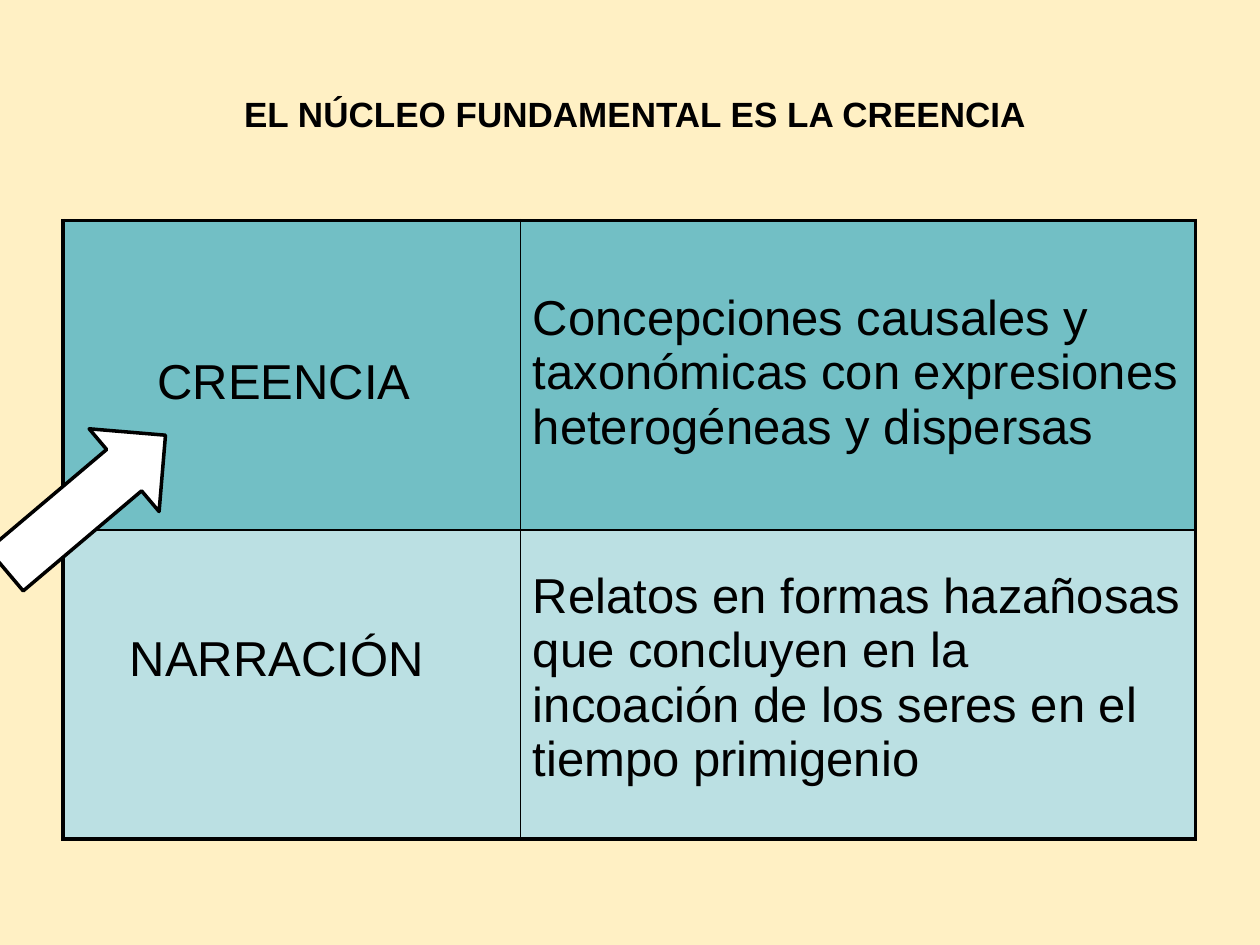
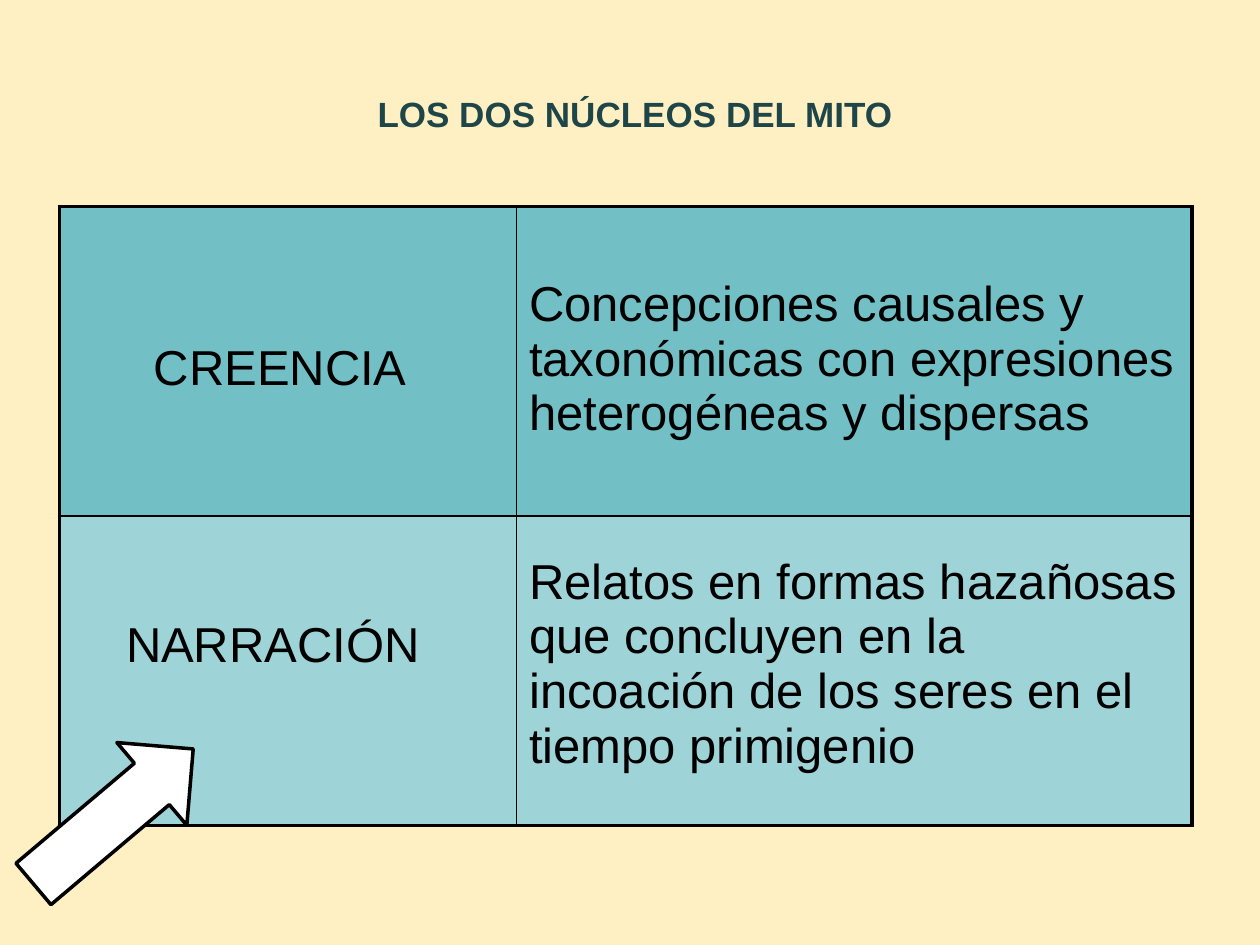
from lxml.etree import SubElement
from pptx import Presentation
from pptx.dml.color import RGBColor
from pptx.enum.shapes import MSO_SHAPE
from pptx.enum.text import MSO_ANCHOR, PP_ALIGN
from pptx.oxml.ns import qn
from pptx.util import Inches, Pt

GRID_COLUMNS = 100
BLACK, WHITE = "000000", "FFFFFF"
BACKGROUND = "FFF0C4"
BELIEF_FILL = "72BFC5"
OUTER_BORDER, INNER_BORDER = 2.25, 1

COLUMN_WIDTHS = (36.3, 53.6)
ROW_HEIGHT = 24.55
CELLS = (
    (
        ("CREENCIA", {"margin_left": 7.5, "margin_top": 10.7}),
        ("Concepciones causales y taxonómicas con expresiones "
         "heterogéneas y dispersas", {"margin_left": 1, "margin_top": 5.6}),
    ),
    (
        ("NARRACIÓN", {"margin_left": 5.3, "margin_top": 8.1}),
        ("Relatos en formas hazañosas que concluyen en la incoación "
         "de los seres en el tiempo primigenio",
         {"margin_left": 1, "margin_top": 3.1}),
    ),
)
SLIDES = (
    {"title": "EL NÚCLEO FUNDAMENTAL ES LA CREENCIA", "title_color": BLACK,
     "table_at": (5, 17.5), "narration_fill": "BBE0E3", "arrow_at": (-1.5, 35.6)},
    {"title": "LOS DOS NÚCLEOS DEL MITO", "title_color": "1E4649",
     "table_at": (4.7, 16.4), "narration_fill": "9ED3D7", "arrow_at": (0.7, 60.5)},
)


def color(value):
    return RGBColor.from_string(value)


def apply_format(target, values):
    for name, value in values.items():
        setattr(target, name, value)


class Deck:
    title_font = {"name": "Arial", "size": Pt(20), "bold": True}
    cell_font = {"name": "Arial", "size": Pt(28), "bold": False}

    def __init__(self, presentation):
        self.presentation = presentation
        self.unit = presentation.slide_width / GRID_COLUMNS
        self.slide = None

    def grid(self, *values):
        return [round(value * self.unit) for value in values]

    def add_slide(self):
        layout = self.presentation.slide_layouts[6]
        self.slide = self.presentation.slides.add_slide(layout)
        self.paint(self.slide.background.fill, BACKGROUND)

    def paint(self, fill, value):
        fill.solid()
        fill.fore_color.rgb = color(value)

    def add_text(self, paragraph, text, font, value):
        run = paragraph.add_run()
        run.text = text
        apply_format(run.font, font)
        run.font.color.rgb = color(value)

    def add_title(self, text, value):
        shape = self.slide.shapes.add_textbox(*self.grid(4.7, 1.6, 91.4, 14.8))
        frame = shape.text_frame
        apply_format(frame, {"word_wrap": True, "vertical_anchor": MSO_ANCHOR.MIDDLE})
        paragraph = frame.paragraphs[0]
        paragraph.alignment = PP_ALIGN.CENTER
        self.add_text(paragraph, text, self.title_font, value)

    def add_table(self, position, row_fills):
        size = sum(COLUMN_WIDTHS), ROW_HEIGHT * len(CELLS)
        frame = self.slide.shapes.add_table(
            len(CELLS), len(COLUMN_WIDTHS), *self.grid(*position, *size))
        table = frame.table
        apply_format(table, {"first_row": False, "horz_banding": False})
        for column, width in zip(table.columns, self.grid(*COLUMN_WIDTHS)):
            column.width = width
        for row_index, row_cells in enumerate(CELLS):
            table.rows[row_index].height = self.grid(ROW_HEIGHT)[0]
            for column_index, (text, margins) in enumerate(row_cells):
                cell = table.cell(row_index, column_index)
                self.add_borders(cell, {
                    "a:lnL": column_index == 0,
                    "a:lnR": column_index == len(COLUMN_WIDTHS) - 1,
                    "a:lnT": row_index == 0,
                    "a:lnB": row_index == len(CELLS) - 1,
                })
                self.paint(cell.fill, row_fills[row_index])
                apply_format(cell, {name: self.grid(value)[0]
                                    for name, value in margins.items()})
                self.add_text(cell.text_frame.paragraphs[0], text, self.cell_font, BLACK)

    def add_borders(self, cell, sides):
        properties = cell._tc.get_or_add_tcPr()
        for tag, is_outer in sides.items():
            width = Pt(OUTER_BORDER if is_outer else INNER_BORDER)
            line = SubElement(properties, qn(tag), w=str(int(width)))
            fill = SubElement(line, qn("a:solidFill"))
            SubElement(fill, qn("a:srgbClr"), val=BLACK)

    def add_arrow(self, position):
        shape = self.slide.shapes.add_shape(
            MSO_SHAPE.RIGHT_ARROW, *self.grid(*position, 16.6, 8.6))
        shape.rotation = 319.8
        shape.shadow.inherit = False
        self.paint(shape.fill, WHITE)
        self.paint(shape.line.fill, BLACK)
        shape.line.width = Pt(2)


def main():
    presentation = Presentation()
    apply_format(presentation, {"slide_width": Inches(10), "slide_height": Inches(7.5)})
    deck = Deck(presentation)
    for content in SLIDES:
        deck.add_slide()
        deck.add_table(content["table_at"], (BELIEF_FILL, content["narration_fill"]))
        deck.add_title(content["title"], content["title_color"])
        deck.add_arrow(content["arrow_at"])
    presentation.save("out.pptx")


if __name__ == "__main__":
    main()
